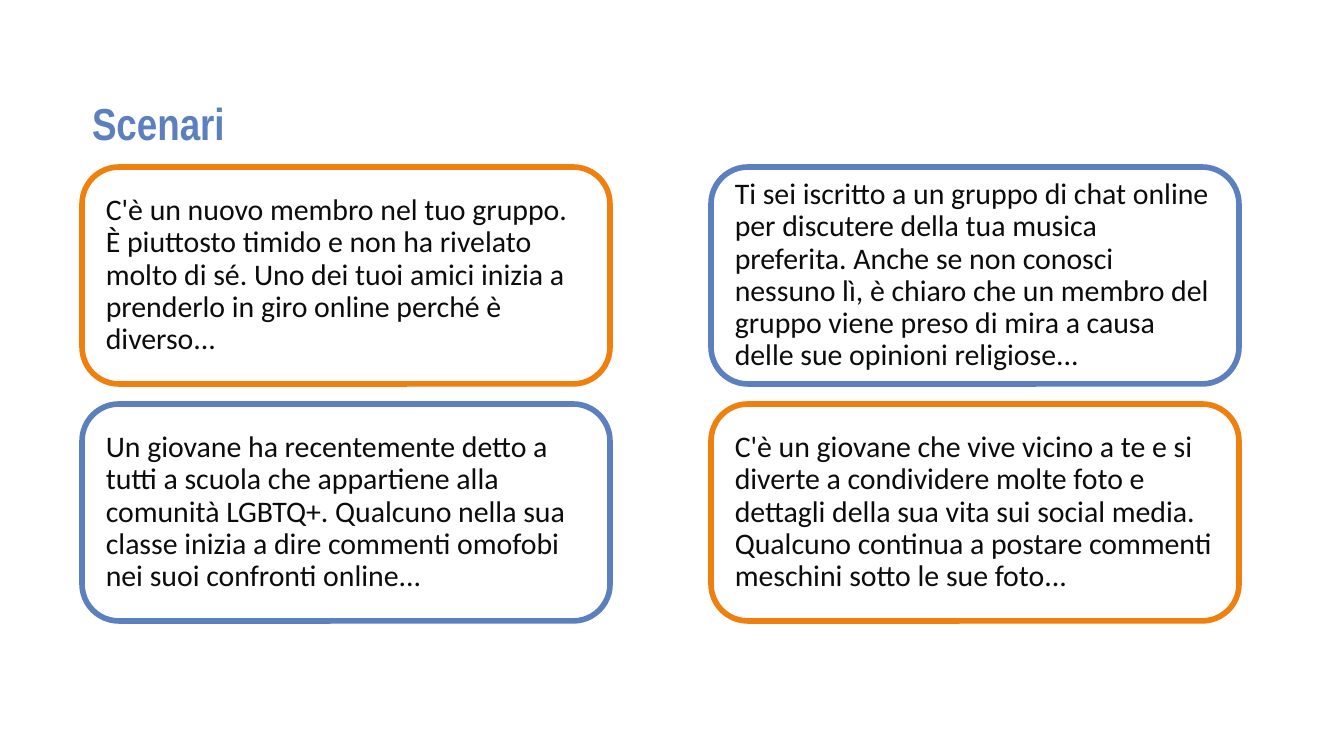
"""Build the slide "Scenari" with four outlined scenario cards."""
from dataclasses import dataclass

from pptx import Presentation
from pptx.dml.color import RGBColor
from pptx.enum.shapes import MSO_SHAPE
from pptx.enum.text import MSO_ANCHOR, PP_ALIGN
from pptx.util import Emu, Pt

EMU_PER_PX = 914400 / 134.4


@dataclass(frozen=True)
class Theme:
    """Hold the colours, fonts and type sizes."""
    blue: RGBColor = RGBColor(0x5B, 0x7F, 0xBF)
    orange: RGBColor = RGBColor(0xF0, 0x80, 0x0E)
    ink: RGBColor = RGBColor(0x0C, 0x0C, 0x0C)
    title_font: str = "Arial Narrow"
    body_font: str = "Calibri"
    title_size: Pt = Pt(24)
    body_size: Pt = Pt(16)
    outline: Pt = Pt(3)


THEME = Theme()

CARD_WIDTH, CARD_HEIGHT = 528, 217
LEFT, TOP = 82, 167
COLUMN_STEP, ROW_STEP = 629, 237

SCENARIOS = [
    [
        "C'è un nuovo membro nel tuo gruppo. È piuttosto timido e non ha rivelato "
        "molto di sé. Uno dei tuoi amici inizia a prenderlo in giro online perché "
        "è diverso...",
        "Ti sei iscritto a un gruppo di chat online per discutere della tua musica "
        "preferita. Anche se non conosci nessuno lì, è chiaro che un membro del "
        "gruppo viene preso di mira a causa delle sue opinioni religiose...",
    ],
    [
        "Un giovane ha recentemente detto a tutti a scuola che appartiene alla "
        "comunità LGBTQ+. Qualcuno nella sua classe inizia a dire commenti omofobi "
        "nei suoi confronti online...",
        "C'è un giovane che vive vicino a te e si diverte a condividere molte foto e "
        "dettagli della sua vita sui social media. Qualcuno continua a postare "
        "commenti meschini sotto le sue foto...",
    ],
]


def px(length):
    """Turn pixels into EMU."""
    return Emu(round(length * EMU_PER_PX))


def write_text(shape, text, font_name, size, color, inset_x, inset_y, bold=False):
    """Write one left-aligned, vertically centred paragraph."""
    frame = shape.text_frame
    frame.text = text
    frame.word_wrap = True
    frame.vertical_anchor = MSO_ANCHOR.MIDDLE
    frame.margin_left = frame.margin_right = px(inset_x)
    frame.margin_top = frame.margin_bottom = px(inset_y)
    paragraph = frame.paragraphs[0]
    paragraph.alignment = PP_ALIGN.LEFT
    paragraph.line_spacing = 0.9
    font = paragraph.runs[0].font
    font.name, font.size, font.bold = font_name, size, bold
    font.color.rgb = color


def add_title(slide, text):
    """Add the slide title."""
    shape = slide.shapes.add_textbox(px(LEFT), px(50), px(444), px(152))
    write_text(shape, text, THEME.title_font, THEME.title_size, THEME.blue, 10, 5, bold=True)


def add_card(slide, left, top, text, color):
    """Add a rounded card with a coloured outline."""
    shape = slide.shapes.add_shape(
        MSO_SHAPE.ROUNDED_RECTANGLE, px(left), px(top), px(CARD_WIDTH), px(CARD_HEIGHT)
    )
    shape.shadow.inherit = False
    shape.adjustments[0] = 0.17
    shape.fill.background()
    shape.line.color.rgb = color
    shape.line.width = THEME.outline
    write_text(shape, text, THEME.body_font, THEME.body_size, THEME.ink, 13, 13)


def main():
    """Build and save the presentation."""
    presentation = Presentation()
    presentation.slide_width, presentation.slide_height = px(1344), px(756)
    slide = presentation.slides.add_slide(presentation.slide_layouts[6])
    add_title(slide, "Scenari")
    for row, texts in enumerate(SCENARIOS):
        for column, text in enumerate(texts):
            color = THEME.orange if row == column else THEME.blue
            add_card(slide, LEFT + column * COLUMN_STEP, TOP + row * ROW_STEP, text, color)
    presentation.save("out.pptx")


if __name__ == "__main__":
    main()
